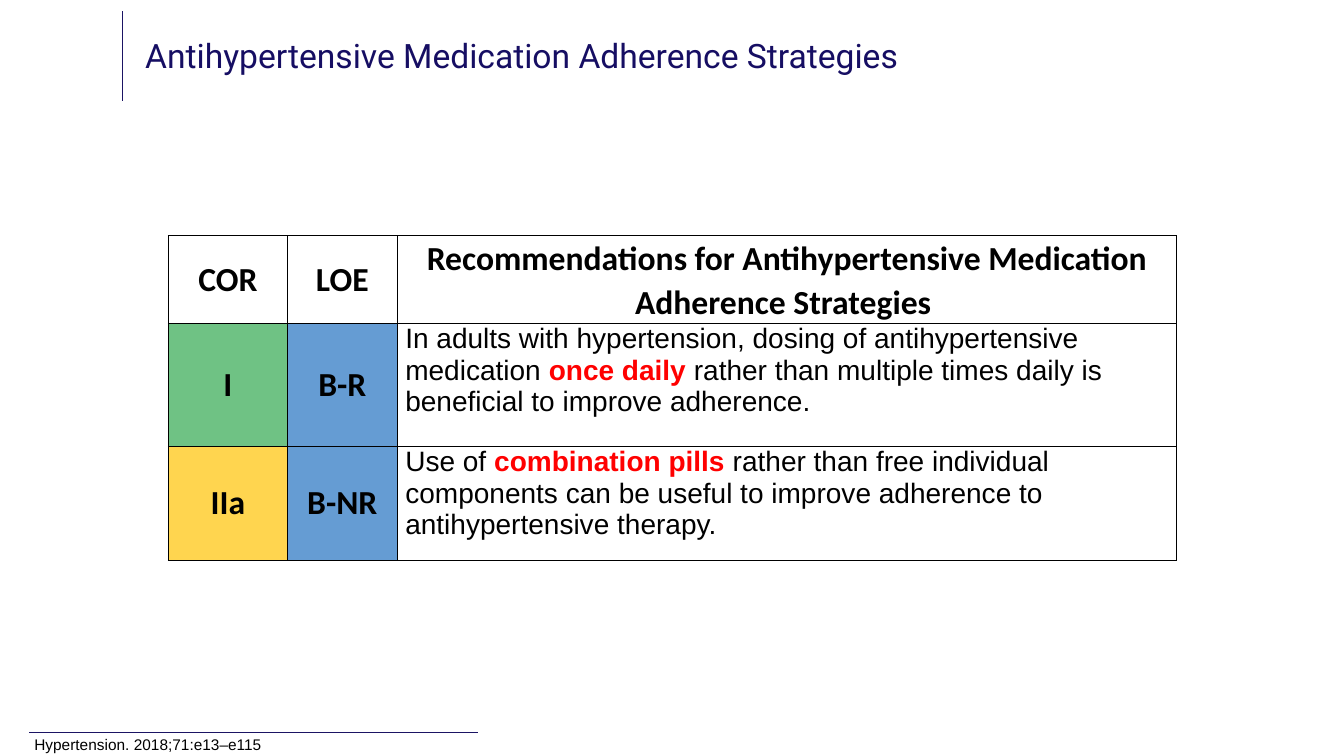
from dataclasses import dataclass

from lxml import etree
from pptx import Presentation
from pptx.dml.color import RGBColor
from pptx.enum import shapes, text
from pptx.oxml import ns
from pptx.util import Inches, Pt


@dataclass(frozen=True)
class Theme:
    navy: str = "160E63"
    rule: str = "1B1464"
    black: str = "000000"
    white: str = "FFFFFF"
    red: str = "FF0000"
    green: str = "6FC284"
    yellow: str = "FFD54F"
    blue: str = "659CD3"
    heading: int = 24
    body: int = 20
    citation: int = 11


THEME = Theme()
CENTER, LEFT = text.PP_ALIGN.CENTER, text.PP_ALIGN.LEFT
MIDDLE, TOP = text.MSO_ANCHOR.MIDDLE, text.MSO_ANCHOR.TOP

HEADERS = ["COR", "LOE",
           "Recommendations for Antihypertensive Medication Adherence Strategies "]
# Class, its colour, level of evidence, recommendation as (words, emphasised)
RECOMMENDATIONS = [
    ("I", THEME.green, "B-R", [
        ("In adults with hypertension, dosing of antihypertensive medication ", False),
        ("once daily", True),
        (" rather than multiple times daily is beneficial to improve adherence.", False)]),
    ("IIa", THEME.yellow, "B-NR", [
        ("Use of ", False),
        ("combination pills", True),
        (" rather than free individual components can be useful to improve "
         "adherence to antihypertensive therapy.", False)]),
]


def write(frame, content, size, font="Arial", color=THEME.black, bold=False,
          align=LEFT, spacing=None):
    """Fill a frame with one paragraph of plain text or (words, emphasised) pairs."""
    paragraph = frame.paragraphs[0]
    paragraph.alignment = align
    paragraph.space_before = Pt(0)
    if spacing:
        paragraph.line_spacing = spacing
    pairs = [(content, False)] if isinstance(content, str) else content
    for words, emphasised in pairs:
        run = paragraph.add_run()
        run.text = words
        run.font.name = font
        run.font.size = Pt(size)
        run.font.bold = bold or emphasised
        run.font.color.rgb = RGBColor.from_string(THEME.red if emphasised else color)
    return paragraph


def place(placeholder, left, top, width, height):
    placeholder.left, placeholder.top = Inches(left), Inches(top)
    placeholder.width, placeholder.height = Inches(width), Inches(height)
    frame = placeholder.text_frame
    frame.word_wrap = True
    frame.auto_size = text.MSO_AUTO_SIZE.NONE
    frame.vertical_anchor = MIDDLE
    frame.margin_top = frame.margin_bottom = 0
    return frame


def add_rule(slide, x1, y1, x2, y2):
    rule = slide.shapes.add_connector(
        shapes.MSO_CONNECTOR.STRAIGHT, Inches(x1), Inches(y1), Inches(x2), Inches(y2))
    rule.line.color.rgb = RGBColor.from_string(THEME.rule)
    rule.line.width = Pt(0.5)
    etree.SubElement(rule._element.spPr, ns.qn("a:effectLst"))


def format_cell(cell, fill, anchor=MIDDLE):
    properties = cell._tc.get_or_add_tcPr()
    for side in ("lnL", "lnR", "lnT", "lnB"):
        border = etree.SubElement(properties, ns.qn(f"a:{side}"), w=str(Pt(1)))
        solid = etree.SubElement(border, ns.qn("a:solidFill"))
        etree.SubElement(solid, ns.qn("a:srgbClr"), val=THEME.black)
    cell.fill.solid()
    cell.fill.fore_color.rgb = RGBColor.from_string(fill)
    cell.vertical_anchor = anchor
    cell.margin_left = cell.margin_right = Inches(0.08)
    cell.margin_top = cell.margin_bottom = 0
    return cell.text_frame


def add_recommendations(slide):
    widths, heights = [1.18, 1.09, 7.73], [0.87, 1.22, 1.13]
    table = slide.shapes.add_table(
        len(heights), len(widths), Inches(1.67), Inches(2.34),
        Inches(sum(widths)), Inches(sum(heights))).table
    table.first_row = table.horz_banding = False
    for column, width in zip(table.columns, widths):
        column.width = Inches(width)
    for row, height in zip(table.rows, heights):
        row.height = Inches(height)

    label = dict(size=THEME.heading, font="Calibri", bold=True, align=CENTER)
    for column, header in enumerate(HEADERS):
        spacing = 1.07 if column == 2 else None
        write(format_cell(table.cell(0, column), THEME.white), header,
              spacing=spacing, **label)
    for row, (grade, color, evidence, advice) in enumerate(RECOMMENDATIONS, start=1):
        write(format_cell(table.cell(row, 0), color), grade, **label)
        write(format_cell(table.cell(row, 1), THEME.blue), evidence, **label)
        write(format_cell(table.cell(row, 2), THEME.white, TOP), advice, THEME.body)


def main():
    deck = Presentation()
    deck.slide_width, deck.slide_height = Inches(13.33), Inches(7.5)
    slide = deck.slides.add_slide(deck.slide_layouts[1])

    # Rules beside the title and above the citation
    add_rule(slide, 1.21, 0.11, 1.21, 1)
    add_rule(slide, 0.29, 7.27, 4.74, 7.27)

    # Title
    title = place(slide.shapes.title, 1.34, 0.05, 8.46, 1.05)
    write(title, "Antihypertensive Medication Adherence Strategies", THEME.heading,
          font="Roboto", color=THEME.navy, spacing=0.9)

    # Citation, without the template's bullet
    citation = place(slide.placeholders[1], 0.24, 7.3, 8.33, 0.2)
    source = write(citation, "Hypertension. 2018;71:e13–e115", THEME.citation, spacing=0.9)
    properties = source._p.get_or_add_pPr()
    properties.set("marL", "0")
    properties.set("indent", "0")
    etree.SubElement(properties, ns.qn("a:buNone"))

    # Recommendations table
    add_recommendations(slide)

    deck.save("out.pptx")


if __name__ == "__main__":
    main()
